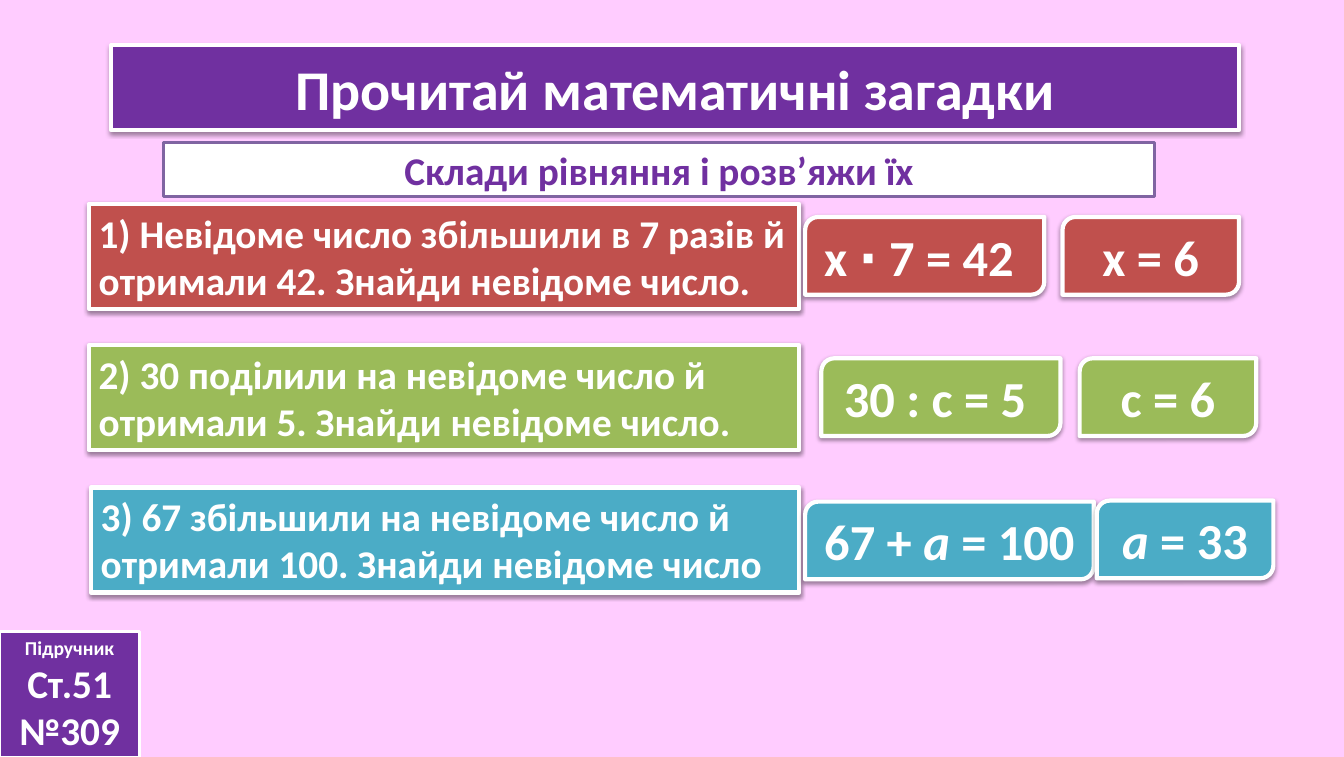
from lxml import etree
from pptx import Presentation
from pptx.dml.color import RGBColor
from pptx.enum import shapes, text
from pptx.oxml import ns
from pptx.util import Inches, Pt

PINK = RGBColor(0xFF, 0xCC, 0xFF)
PURPLE = RGBColor(0x70, 0x30, 0xA0)
VIOLET = RGBColor(0x80, 0x64, 0xA2)
WHITE = RGBColor(0xFF, 0xFF, 0xFF)
RED = RGBColor(0xC0, 0x50, 0x4D)
GREEN = RGBColor(0x9B, 0xBB, 0x59)
BLUE = RGBColor(0x4B, 0xAC, 0xC6)

RECT = shapes.MSO_SHAPE.RECTANGLE
CARD = shapes.MSO_SHAPE.ROUND_2_DIAG_RECTANGLE
CENTER = text.PP_ALIGN.CENTER
LEFT = text.PP_ALIGN.LEFT

RIDDLES = [
    (RED, (0.88, 2.02, 7.04),
     "1) Невідоме число збільшили в 7 разів й отримали 42. Знайди невідоме число.",
     (7.98, 2.15, 2.37), ["х ∙ 7 = 42 "],
     (10.53, 2.15, 1.75), ["х = 6"]),
    (GREEN, (0.88, 3.42, 7.04),
     "2) 30 поділили на невідоме число й отримали 5. Знайди невідоме число.",
     (8.14, 3.55, 2.37), ["30 : с = 5 "],
     (10.7, 3.55, 1.75), ["с = 6"]),
    (BLUE, (0.9, 4.83, 7.02),
     "3) 67 збільшили на невідоме число й отримали 100. Знайди невідоме число",
     (7.98, 4.97, 2.86), ["67 + ", "а", " = 100"],
     (10.87, 4.96, 1.75), ["а", " = 33"]),
]


def add_shadow(shape):
    effects = shape._element.spPr.find(ns.qn("a:effectLst"))
    shadow = etree.SubElement(effects, ns.qn("a:outerShdw"), blurRad="40000",
                              dist="20000", dir="5400000", rotWithShape="0")
    black = etree.SubElement(shadow, ns.qn("a:srgbClr"), val="000000")
    etree.SubElement(black, ns.qn("a:alpha"), val="38000")


def add_panel(slide, kind, place, fill, line=WHITE, width=3, shadow=True):
    panel = slide.shapes.add_shape(kind, *map(Inches, place))
    panel.fill.solid()
    panel.fill.fore_color.rgb = fill
    panel.line.color.rgb = line
    panel.line.width = Pt(width)
    panel.shadow.inherit = False
    if shadow:
        add_shadow(panel)
    panel.text_frame.word_wrap = True
    panel.text_frame.vertical_anchor = text.MSO_ANCHOR.MIDDLE
    return panel.text_frame


def write(paragraph, words, size=28, color=WHITE, align=CENTER, italic=False):
    paragraph.alignment = align
    run = paragraph.add_run()
    run.text = words
    run.font.name = "Calibri"
    run.font.size = Pt(size)
    run.font.bold = True
    run.font.italic = italic
    run.font.color.rgb = color


def add_question(slide, place, fill, words):
    question = add_panel(slide, RECT, (*place, 1.04), fill)
    question.vertical_anchor = text.MSO_ANCHOR.TOP
    question.auto_size = text.MSO_AUTO_SIZE.SHAPE_TO_FIT_TEXT
    write(question.paragraphs[0], words, align=LEFT)


def add_card(slide, place, fill, parts):
    card = add_panel(slide, CARD, (*place, 0.77), fill)
    for part in parts:
        write(card.paragraphs[0], part, size=36, italic=part == "а")


def main():
    deck = Presentation()
    deck.slide_width = Inches(13.32)
    deck.slide_height = Inches(7.5)
    slide = deck.slides.add_slide(deck.slide_layouts[6])
    slide.background.fill.solid()
    slide.background.fill.fore_color.rgb = PINK

    title = add_panel(slide, RECT, (1.1, 0.45, 11.18, 0.84), PURPLE)
    write(title.paragraphs[0], "Прочитай математичні загадки", size=40)

    textbook = add_panel(slide, RECT, (0, 6.26, 1.38, 1.24), PURPLE,
                         width=2, shadow=False)
    write(textbook.paragraphs[0], "Підручник", size=14)
    write(textbook.add_paragraph(), "Ст.51 №309")

    task = add_panel(slide, RECT, (1.62, 1.41, 9.82, 0.54), WHITE,
                     line=VIOLET, width=2, shadow=False)
    write(task.paragraphs[0], "Склади рівняння і розв’яжи їх", color=PURPLE)

    for color, place, riddle, equation_place, equation, answer_place, answer in RIDDLES:
        add_question(slide, place, color, riddle)
        add_card(slide, equation_place, color, equation)
        add_card(slide, answer_place, color, answer)

    deck.save("out.pptx")


if __name__ == "__main__":
    main()
